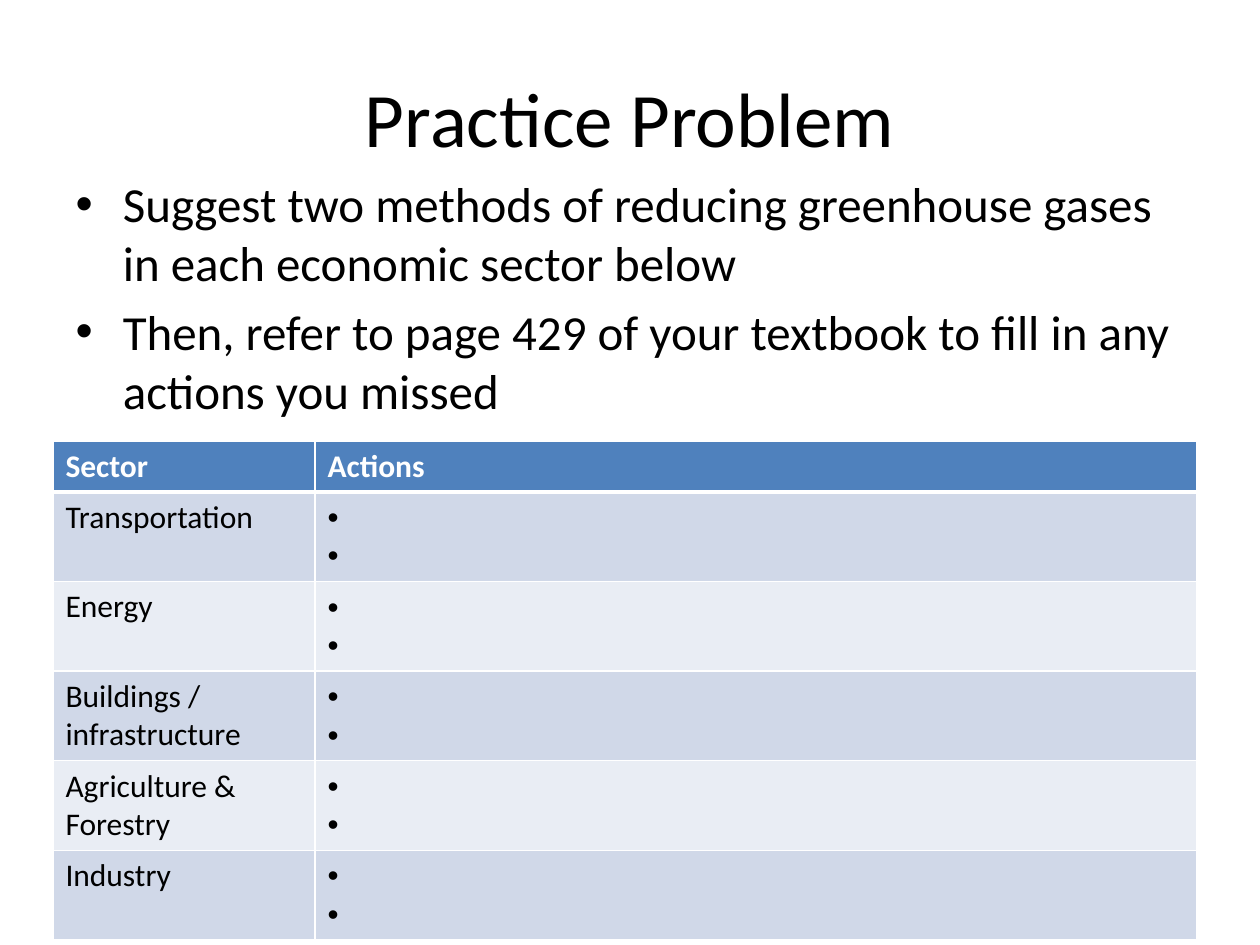
from lxml.etree import SubElement
from pptx import Presentation
from pptx.dml.color import RGBColor
from pptx.enum.text import MSO_ANCHOR, MSO_AUTO_SIZE, PP_ALIGN
from pptx.oxml.ns import qn
from pptx.util import Inches, Pt

COLORS = {
    "text": "000000",
    "header": "4F81BD",
    "odd_row": "D0D8E8",
    "even_row": "E9EDF4",
    "white": "FFFFFF",
}
FONT = "Calibri"
INSTRUCTIONS = [
    "Suggest two methods of reducing greenhouse gases in each economic sector below",
    "Then, refer to page 429 of your textbook to fill in any actions you missed",
]
HEADINGS = ["Sector", "Actions"]
SECTORS = [
    "Transportation",
    "Energy",
    "Buildings / infrastructure",
    "Agriculture & Forestry",
    "Industry",
]
ACTION_SLOTS = "\n".join([" ", " "])
COLUMN_WIDTHS = [2.08, 7]
HEADER_HEIGHT = 0.4
SECTOR_HEIGHT = 0.71


def place(placeholder, left, top, width, height):
    placeholder.left, placeholder.top = Inches(left), Inches(top)
    placeholder.width, placeholder.height = Inches(width), Inches(height)


def format_runs(text_frame, size, color, bold=False):
    for paragraph in text_frame.paragraphs:
        for run in paragraph.runs:
            run.font.name = FONT
            run.font.size = Pt(size)
            run.font.bold = bold
            run.font.color.rgb = RGBColor.from_string(COLORS[color])


def add_title(slide):
    title = slide.shapes.title
    place(title, 0.5, 0.3, 9, 1.25)
    title.text_frame.text = "Practice Problem"
    title.text_frame.vertical_anchor = MSO_ANCHOR.MIDDLE
    title.text_frame.paragraphs[0].alignment = PP_ALIGN.CENTER
    format_runs(title.text_frame, 44, "text")


def add_instructions(slide):
    instructions = slide.placeholders[1]
    place(instructions, 0.5, 1.33, 9, 2.17)
    instructions.text_frame.text = "\n".join(INSTRUCTIONS)
    instructions.text_frame.auto_size = MSO_AUTO_SIZE.NONE
    format_runs(instructions.text_frame, 28, "text")


def add_border(cell, side, width):
    line = SubElement(cell._tc.get_or_add_tcPr(), qn(f"a:{side}"), w=str(Pt(width)))
    solid = SubElement(line, qn("a:solidFill"))
    SubElement(solid, qn("a:srgbClr"), val=COLORS["white"])


def add_bullets(text_frame):
    for paragraph in text_frame.paragraphs:
        properties = paragraph._p.get_or_add_pPr()
        properties.set("marL", str(Inches(0.31)))
        properties.set("indent", str(Inches(-0.31)))
        SubElement(properties, qn("a:buFont"), typeface="Arial")
        SubElement(properties, qn("a:buChar"), char="•")


def fill_cell(cell, text, row):
    is_header = row == 0
    background = "header" if is_header else "odd_row" if row % 2 else "even_row"
    cell.text_frame.text = text
    format_runs(cell.text_frame, 18, "white" if is_header else "text", is_header)
    add_border(cell, "lnL", 1)
    add_border(cell, "lnR", 1)
    add_border(cell, "lnT", 3 if row == 1 else 1)
    add_border(cell, "lnB", 3 if is_header else 1)
    cell.fill.solid()
    cell.fill.fore_color.rgb = RGBColor.from_string(COLORS[background])


def add_sector_table(slide):
    contents = [HEADINGS] + [[sector, ACTION_SLOTS] for sector in SECTORS]
    heights = [HEADER_HEIGHT] + [SECTOR_HEIGHT] * len(SECTORS)
    sectors = slide.shapes.add_table(
        len(contents), len(HEADINGS), Inches(0.42), Inches(3.5),
        Inches(sum(COLUMN_WIDTHS)), Inches(sum(heights)),
    ).table
    for column, width in zip(sectors.columns, COLUMN_WIDTHS):
        column.width = Inches(width)
    for row, (texts, height) in enumerate(zip(contents, heights)):
        sectors.rows[row].height = Inches(height)
        for column, text in enumerate(texts):
            fill_cell(sectors.cell(row, column), text, row)
        if row > 0:
            add_bullets(sectors.cell(row, 1).text_frame)


def main():
    presentation = Presentation()
    presentation.slide_width = Inches(10)
    presentation.slide_height = Inches(7.5)
    slide = presentation.slides.add_slide(presentation.slide_layouts[1])
    add_title(slide)
    add_instructions(slide)
    add_sector_table(slide)
    presentation.save("out.pptx")


if __name__ == "__main__":
    main()
